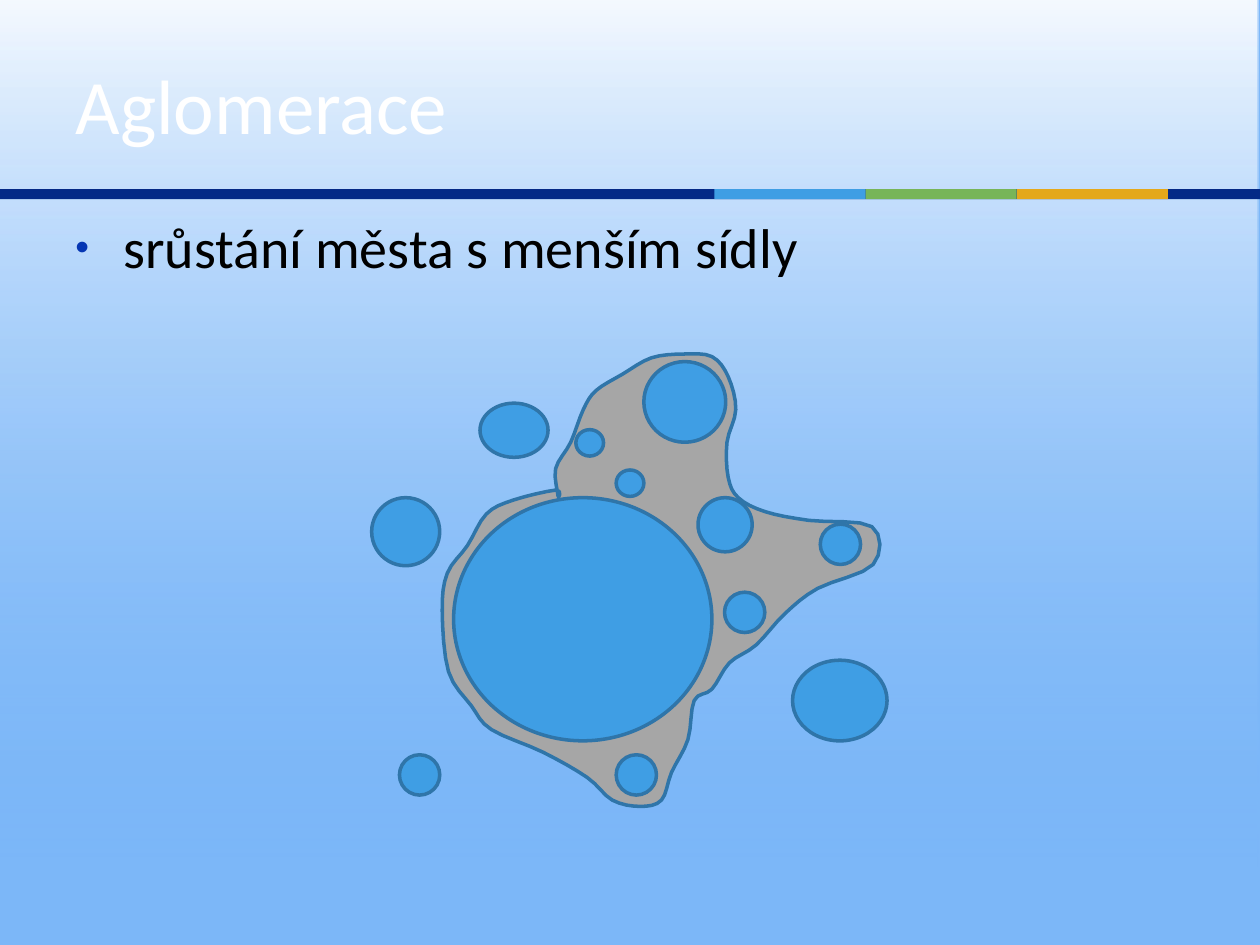
from lxml.etree import SubElement
from pptx import Presentation
from pptx.dml.color import RGBColor as RGB
from pptx.enum.shapes import MSO_SHAPE as SHAPE
from pptx.enum.text import MSO_ANCHOR as ANCHOR, PP_ALIGN as ALIGN
from pptx.oxml.ns import qn
from pptx.util import Inches, Pt

SKY = RGB(0x7C, 0xB7, 0xF8)
WHITE = RGB(0xFF, 0xFF, 0xFF)
BLACK = RGB(0, 0, 0)
NAVY = RGB(0x04, 0x29, 0x86)
BLUE = RGB(0x3F, 0x9E, 0xE4)
GREEN = RGB(0x77, 0xB5, 0x59)
AMBER = RGB(0xE4, 0xA8, 0x1B)
GREY = RGB(0xA6, 0xA6, 0xA6)
OUTLINE = RGB(0x2F, 0x75, 0xA9)
BULLET = RGB(0x05, 0x36, 0xB3)
FONT = "Calibri"

URBAN_EDGE = [
    (2.43, 1.94), (2.41, 1.72), (2.53, 1.51), (2.63, 1.25), (2.73, 1.1), (2.94, 0.97),
    (3.17, 0.84), (3.42, 0.81), (3.65, 0.83), (3.78, 0.99), (3.84, 1.25), (3.77, 1.51),
    (3.78, 1.79), (3.86, 1.95), (4.07, 2.06), (4.42, 2.13), (4.92, 2.18), (4.93, 2.48),
    (4.49, 2.67), (4.23, 2.87), (4, 3.12), (3.79, 3.26), (3.65, 3.47), (3.51, 3.56),
    (3.46, 3.87), (3.33, 4.13), (3.25, 4.35), (3.08, 4.4), (2.86, 4.35), (2.66, 4.17),
    (2.31, 3.97), (1.9, 3.79), (1.74, 3.6), (1.56, 3.33), (1.51, 2.85), (1.55, 2.55),
    (1.71, 2.33), (1.86, 2.08), (2.07, 1.97), (2.41, 1.89),
]
SETTLEMENTS = {
    (2.05, 1.93): [(1.6, 1.95)],
    (0.65, 0.64): [(3.11, 0.87)],
    (0.75, 0.64): [(4.29, 3.24)],
    (0.54, 0.43): [(1.81, 1.2)],
    (0.54, 0.54): [(0.95, 1.95)],
    (0.43, 0.43): [(3.54, 1.95)],
    (0.32, 0.32): [(4.51, 2.16), (1.17, 3.99), (2.89, 3.99), (3.75, 2.7)],
    (0.22, 0.21): [(2.89, 1.73), (2.57, 1.41)],
}


def add_plain_shape(slide, preset, box):
    """Add a preset shape without shadow or outline."""
    shape = slide.shapes.add_shape(preset, *(Inches(v) for v in box))
    shape.shadow.inherit = False
    shape.line.fill.background()
    return shape


def paint_district(shape, colour):
    """Fill a part of the diagram and give it the common outline."""
    shape.shadow.inherit = False
    shape.fill.solid()
    shape.fill.fore_color.rgb = colour
    shape.line.color.rgb = OUTLINE
    shape.line.width = Pt(2)


def add_sky(slide, box):
    """Add the haze that turns white towards the top of the box."""
    slide.background.fill.solid()
    slide.background.fill.fore_color.rgb = SKY
    haze = add_plain_shape(slide, SHAPE.RECTANGLE, box)
    haze.fill.gradient()
    haze.fill.gradient_angle = 90
    for stop, colour, position in zip(haze.fill.gradient_stops, (SKY, WHITE), (0.01, 1)):
        stop.color.rgb = colour
        stop.position = position
    for colour, alpha in zip(haze._element.spPr.iter(qn("a:srgbClr")), (0, 92000)):
        SubElement(colour, qn("a:alpha")).set("val", str(alpha))


def add_stripe(slide, box):
    """Add the navy rule with its three coloured segments."""
    left, top, width, height = box
    segment = 1.2
    first = left + width - 0.73 - 3 * segment
    bars = [(left, width, NAVY)]
    bars += [(first + i * segment, segment, c) for i, c in enumerate((BLUE, GREEN, AMBER))]
    for bar_left, bar_width, colour in bars:
        bar = add_plain_shape(slide, SHAPE.RECTANGLE, (bar_left, top, bar_width, height))
        bar.fill.solid()
        bar.fill.fore_color.rgb = colour


def write_run(paragraph, text, size, colour):
    """Add one formatted run to a paragraph."""
    run = paragraph.add_run()
    run.text = text
    run.font.name = FONT
    run.font.size = Pt(size)
    run.font.color.rgb = colour


def place_title(slide, box, text):
    """Place the title in front of the haze and write it."""
    title = slide.shapes.title
    slide.shapes._spTree.append(title._element)
    title.left, title.top, title.width, title.height = (Inches(v) for v in box)
    title.text_frame.vertical_anchor = ANCHOR.MIDDLE
    heading = title.text_frame.paragraphs[0]
    heading.alignment = ALIGN.LEFT
    write_run(heading, text, 44, WHITE)


def add_definition(slide, box, text):
    """Add the bulleted definition."""
    frame = slide.shapes.add_textbox(*(Inches(v) for v in box)).text_frame
    frame.word_wrap = True
    definition = frame.paragraphs[0]
    properties = definition._p.get_or_add_pPr()
    properties.set("marL", str(Inches(0.38)))
    properties.set("indent", str(Inches(-0.38)))
    SubElement(SubElement(properties, qn("a:buClr")), qn("a:srgbClr")).set("val", str(BULLET))
    SubElement(properties, qn("a:buSzPct")).set("val", "70000")
    SubElement(properties, qn("a:buFont")).set("typeface", "Arial")
    SubElement(properties, qn("a:buChar")).set("char", "•")
    write_run(definition, text, 32, BLACK)


def smooth_outline(corners, steps=4):
    """Return a closed Catmull-Rom curve through the corners."""
    curve = []
    for i, b in enumerate(corners):
        a, c, d = (corners[(i + k) % len(corners)] for k in (-1, 1, 2))
        for t in (step / steps for step in range(steps)):
            curve.append(tuple(
                q + t / 2 * (r - p + t * (2 * p - 5 * q + 4 * r - s + t * (3 * (q - r) + s - p)))
                for p, q, r, s in zip(a, b, c, d)
            ))
    return curve


def add_agglomeration(slide, box):
    """Draw the grown-together area and the settlements in and around it."""
    left, top = box[:2]
    edge = [(Inches(left + x), Inches(top + y)) for x, y in smooth_outline(URBAN_EDGE)]
    builder = slide.shapes.build_freeform(*edge[0])
    builder.add_line_segments(edge[1:], close=True)
    paint_district(builder.convert_to_shape(), GREY)
    for size, places in SETTLEMENTS.items():
        for x, y in places:
            settlement = add_plain_shape(slide, SHAPE.OVAL, (left + x, top + y, *size))
            paint_district(settlement, BLUE)


def main():
    """Build and save the slide."""
    deck = Presentation()
    deck.slide_width, deck.slide_height = Inches(10), Inches(7.5)
    slide = deck.slides.add_slide(deck.slide_layouts[5])
    add_sky(slide, (-0.01, 0, 10, 6.88))
    add_stripe(slide, (0, 1.5, 10, 0.08))
    place_title(slide, (0.5, 0.2, 9, 1.25), "Aglomerace")
    add_definition(slide, (0.5, 1.64, 9, 0.69), "srůstání města s menším sídly")
    add_agglomeration(slide, (2, 2, 6, 5))
    deck.save("out.pptx")


if __name__ == "__main__":
    main()
